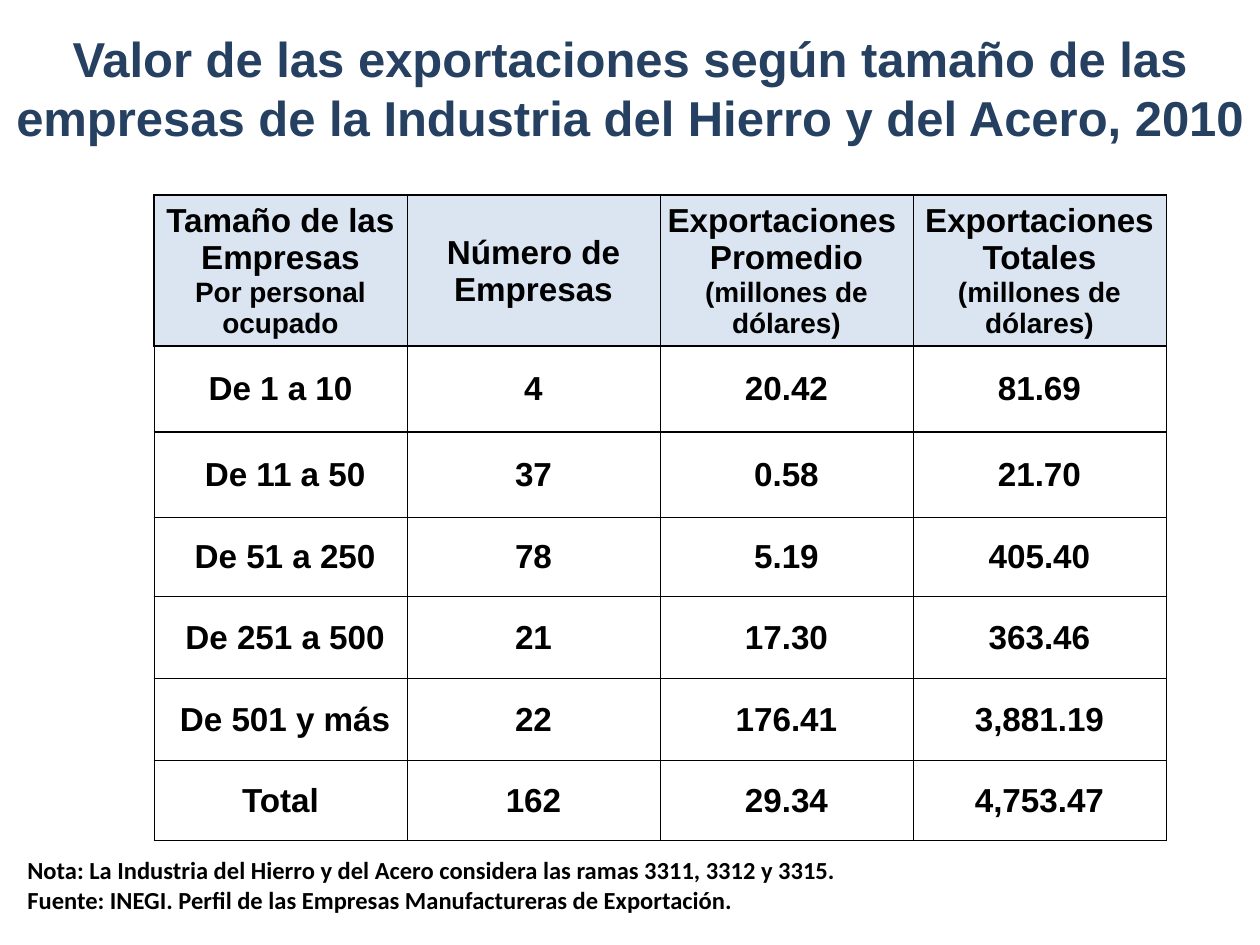
from dataclasses import dataclass

from lxml.etree import SubElement
from pptx import Presentation
from pptx.dml.color import RGBColor
from pptx.enum.text import MSO_ANCHOR, PP_ALIGN
from pptx.oxml.ns import qn
from pptx.util import Pt

SCALE = 914400 / 126
BLACK, NAVY, PALE = "000000", "254061", "DBE5F1"
COLS = [253] * 4
ROWS = [151, 86, 85, 80, 82, 82, 80]
BIG, SMALL = 19, 16


@dataclass
class Line:
    text: str
    size: int = BIG
    font: str = "Arial"
    color: str = BLACK
    align: PP_ALIGN = PP_ALIGN.CENTER


HEAD = [
    [Line("Tamaño de las Empresas"), Line("Por personal ocupado", SMALL)],
    [Line("Número de Empresas")],
    [Line("Exportaciones "), Line("Promedio"), Line("(millones de dólares)", SMALL)],
    [Line("Exportaciones Totales"), Line("(millones de dólares)", SMALL)],
]
BODY = [
    ["De 1 a 10", "4", "20.42", "81.69"],
    [" De 11 a 50", "37", "0.58", "21.70"],
    [" De 51 a 250", "78", "5.19", "405.40"],
    [" De 251 a 500", "21", "17.30", "363.46"],
    [" De 501 y más", "22", "176.41", "3,881.19"],
    ["Total", "162", "29.34", "4,753.47"],
]
TITLE = ("Valor de las exportaciones según tamaño de las empresas "
         "de la Industria del Hierro y del Acero, 2010")
NOTES = [
    "Nota: La Industria del Hierro y del Acero considera las ramas 3311, 3312 y 3315.",
    "Fuente: INEGI. Perfil de las Empresas Manufactureras de Exportación.",
]


def px(num: int) -> int:
    return round(num * SCALE)


def paint(code: str) -> RGBColor:
    return RGBColor.from_string(code)


def apply(item, values: dict) -> None:
    for name, value in values.items():
        setattr(item, name, value)


def write(frame, lines: list[Line]) -> None:
    for i, line in enumerate(lines):
        par = frame.paragraphs[0] if i == 0 else frame.add_paragraph()
        par.alignment = line.align
        run = par.add_run()
        run.text = line.text
        apply(run.font, {"name": line.font, "size": Pt(line.size), "bold": True})
        run.font.color.rgb = paint(line.color)


def edge(cell, widths: dict[str, float]) -> None:
    props = cell._tc.get_or_add_tcPr()
    for side, width in widths.items():
        line = SubElement(props, qn(f"a:ln{side}"), w=str(Pt(width)))
        fill = SubElement(line, qn("a:solidFill"))
        SubElement(fill, qn("a:srgbClr"), val=BLACK)


def grid(slide) -> None:
    shape = slide.shapes.add_table(
        len(ROWS), len(COLS), px(154), px(195), px(sum(COLS)), px(sum(ROWS)))
    table = shape.table
    apply(table, {"first_row": False, "horz_banding": False})
    for col, width in zip(table.columns, COLS):
        col.width = px(width)
    for row, height in zip(table.rows, ROWS):
        row.height = px(height)
    cells = [HEAD] + [[[Line(text)] for text in row] for row in BODY]
    for r, row in enumerate(cells):
        for c, lines in enumerate(row):
            cell = table.cell(r, c)
            apply(cell, {
                "margin_left": px(1), "margin_right": px(1), "margin_top": px(1),
                "margin_bottom": 0, "vertical_anchor": MSO_ANCHOR.MIDDLE})
            edge(cell, {"L": 1 if r == c == 0 else 0.5, "R": 0.5,
                        "T": 1 if r < 3 else 0.5, "B": 1 if r < 2 else 0.5})
            if r == 0:
                cell.fill.solid()
                cell.fill.fore_color.rgb = paint(PALE)
            else:
                cell.fill.background()
            write(cell.text_frame, lines)


def main() -> None:
    """Build the slide on exports by company size."""
    deck = Presentation()
    apply(deck, {"slide_width": px(1260), "slide_height": px(945)})
    slide = deck.slides.add_slide(deck.slide_layouts[5])
    title = slide.shapes.title
    apply(title, {"left": 0, "top": 0, "width": px(1260), "height": px(175)})
    apply(title.text_frame, {"word_wrap": True, "vertical_anchor": MSO_ANCHOR.MIDDLE})
    write(title.text_frame, [Line(TITLE, 28, color=NAVY)])
    grid(slide)
    notes = slide.shapes.add_textbox(px(15), px(849), px(1225), px(72))
    notes.text_frame.word_wrap = True
    write(notes.text_frame,
          [Line(text, 14, "Calibri", align=PP_ALIGN.LEFT) for text in NOTES])
    deck.save("out.pptx")


if __name__ == "__main__":
    main()
